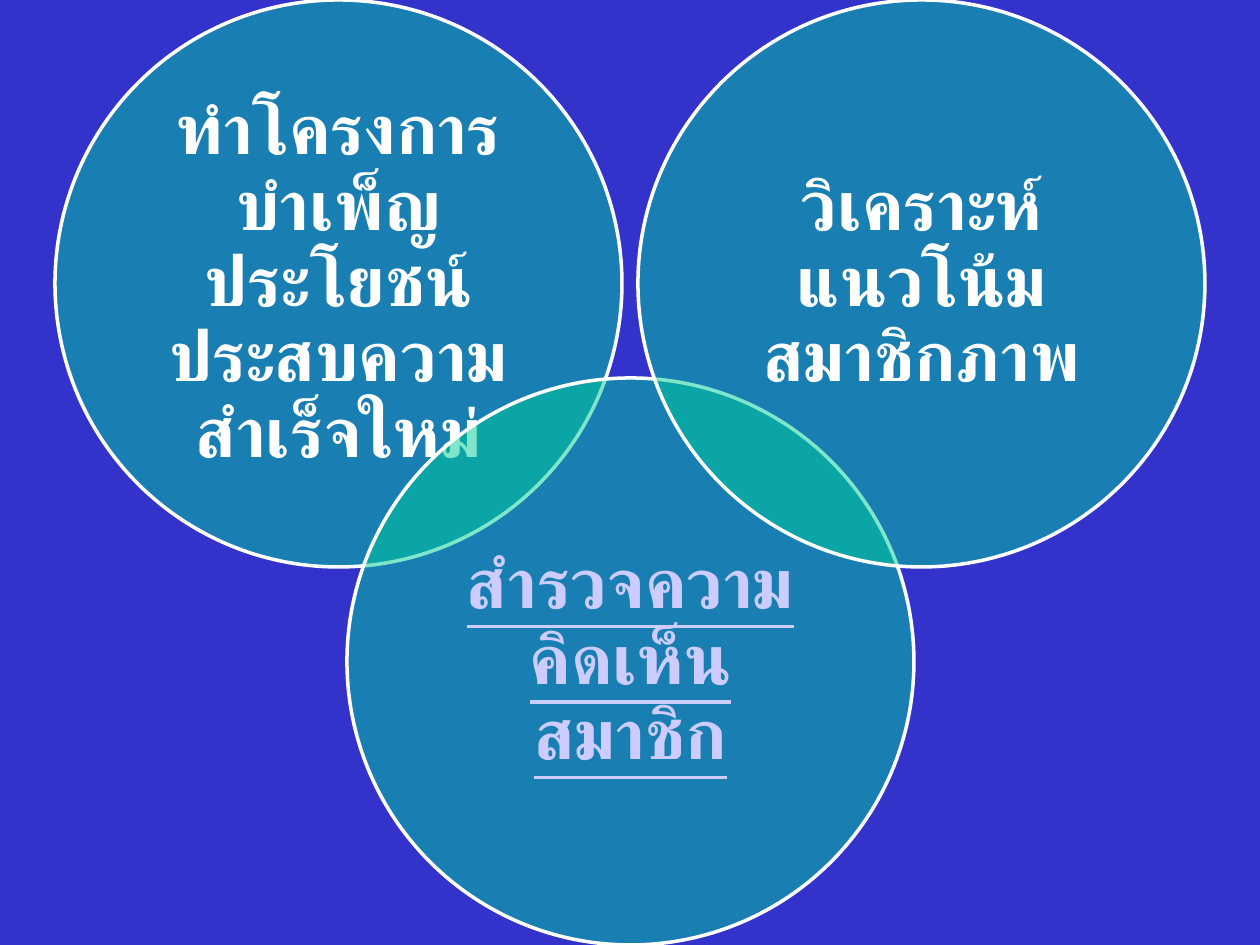
"""Builds a slide of three overlapping circles about membership work."""
from dataclasses import dataclass

from lxml.etree import SubElement
from pptx import Presentation
from pptx.dml.color import RGBColor
from pptx.enum.shapes import MSO_SHAPE as Shape
from pptx.enum.text import MSO_ANCHOR as Anchor, PP_ALIGN as Align
from pptx.oxml.ns import qn
from pptx.slide import Slide
from pptx.util import Emu, Pt

EMU_PER_PX = 914400 / 126
BLUE = RGBColor(0x33, 0x33, 0xCC)
GREEN = RGBColor(0x00, 0xCC, 0x99)
WHITE = RGBColor(0xFF, 0xFF, 0xFF)
LILAC = RGBColor(0xCC, 0xCC, 0xFF)
DIAMETER, LABEL_SIZE, MARGIN = 567, 401, 21
FONT = "Lato"
FRAME_FORMAT = {
    "word_wrap": True,
    "vertical_anchor": Anchor.MIDDLE,
    **{f"margin_{side}": Emu(round(MARGIN * EMU_PER_PX))
       for side in ("left", "top", "right", "bottom")},
}
FONT_FORMAT = {"name": FONT, "size": Pt(40), "bold": True}


@dataclass(frozen=True)
class Circle:
    """One circle with its label."""
    left: int
    top: int
    text: str
    color: RGBColor = WHITE
    underline: bool = False


CIRCLES = (
    Circle(55, 0, "ทำโครงการบำเพ็ญประโยชน์ประสบความสำเร็จใหม่"),
    Circle(347, 378, "สำรวจความคิดเห็นสมาชิก", LILAC, True),
    Circle(638, 0, "วิเคราะห์แนวโน้มสมาชิกภาพ"),
)


def px(n: int) -> Emu:
    """Turns pixels into EMU."""
    return Emu(round(n * EMU_PER_PX))


def apply(target: object, values: dict) -> None:
    """Sets each attribute in values on the target."""
    for name, value in values.items():
        setattr(target, name, value)


def draw_disc(s: Slide, c: Circle) -> None:
    """Draws the half-transparent disc."""
    sp = s.shapes.add_shape(Shape.OVAL, px(c.left), px(c.top),
                            px(DIAMETER), px(DIAMETER))
    sp.shadow.inherit = False
    sp.fill.solid()
    sp.fill.fore_color.rgb = GREEN
    color = sp.fill._xPr.find(qn("a:solidFill"))[0]
    SubElement(color, qn("a:alpha"), val="50000")
    sp.line.color.rgb = WHITE
    sp.line.width = Pt(2)


def draw_label(s: Slide, c: Circle) -> None:
    """Writes the label in the square inside the disc."""
    inset = (DIAMETER - LABEL_SIZE) // 2
    sp = s.shapes.add_textbox(px(c.left + inset), px(c.top + inset),
                              px(LABEL_SIZE), px(LABEL_SIZE))
    tf = sp.text_frame
    apply(tf, FRAME_FORMAT)
    p = tf.paragraphs[0]
    apply(p, {"alignment": Align.CENTER, "line_spacing": 0.9})
    r = p.add_run()
    r.text = c.text
    apply(r.font, {**FONT_FORMAT, "underline": c.underline})
    r.font.color.rgb = c.color
    SubElement(r.font._element, qn("a:cs"), typeface=FONT)


def main() -> None:
    """Builds and saves the slide."""
    prs = Presentation()
    apply(prs, {"slide_width": px(1260), "slide_height": px(945)})
    s = prs.slides.add_slide(prs.slide_layouts[6])
    s.background.fill.solid()
    s.background.fill.fore_color.rgb = BLUE
    for c in CIRCLES:
        draw_disc(s, c)
        draw_label(s, c)
    prs.save("out.pptx")


if __name__ == "__main__":
    main()
